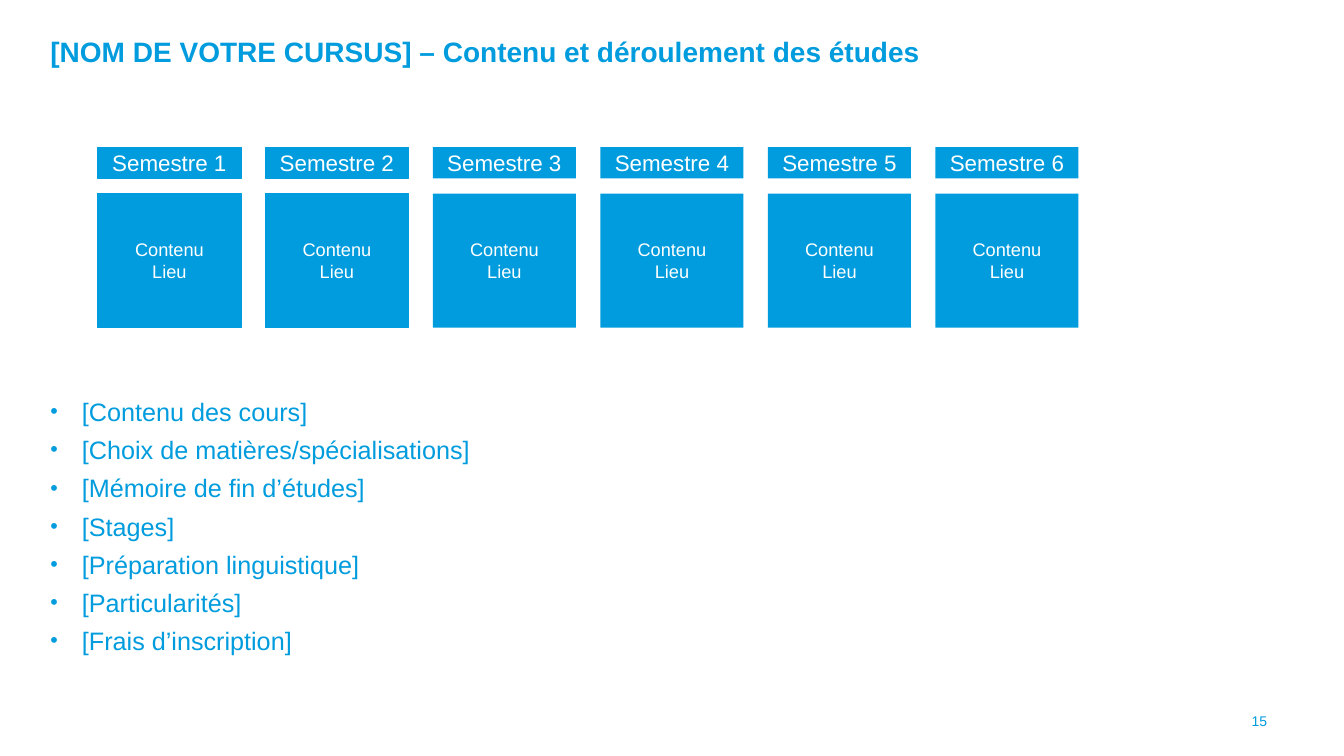
from pptx import Presentation
from pptx.dml.color import RGBColor
from pptx.enum import shapes, text
from pptx.oxml import parse_xml
from pptx.oxml.ns import nsdecls
from pptx.util import Pt

TITLE = "[NOM DE VOTRE CURSUS] – Contenu et déroulement des études"
TERMS = [(f"Semestre {n}", ["Contenu", "Lieu"]) for n in range(1, 7)]
TOPICS = [
    "[Contenu des cours]",
    "[Choix de matières/spécialisations]",
    "[Mémoire de fin d’études]",
    "[Stages]",
    "[Préparation linguistique]",
    "[Particularités]",
    "[Frais d’inscription]",
]
PAGE = "15"

THEME = {
    "font": "Arial",
    "blue": RGBColor.from_string("009CDD"),
    "white": RGBColor.from_string("FFFFFF"),
    "title": 20, "list": 18, "term": 16, "body": 13, "page": 10,
}
LEFT, STEP, WIDE = 69.84, 119.66, 102.24
HEAD = (105.12, 22.32)
BODY = (138.24, 95.76)
OUTLINED = 2
HANG = 22.5


def write(frame, lines, size, color, align, gap=0, line=None, bold=False, bullet=False):
    frame.word_wrap = True
    for i, words in enumerate(lines):
        para = frame.paragraphs[0] if i == 0 else frame.add_paragraph()
        para.text = words
        para.alignment = align
        if line:
            para.line_spacing = line
        if i and gap:
            para.space_before = Pt(gap)
        if bullet:
            props = para._p.get_or_add_pPr()
            props.set("marL", str(Pt(HANG)))
            props.set("indent", str(-Pt(HANG)))
            for tag in (
                f'<a:buClr {nsdecls("a")}><a:srgbClr val="{THEME["blue"]}"/></a:buClr>',
                f'<a:buSzPct {nsdecls("a")} val="85000"/>',
                f'<a:buFont {nsdecls("a")} typeface="Arial"/>',
                f'<a:buChar {nsdecls("a")} char="•"/>',
            ):
                props.append(parse_xml(tag))
        font = para.font
        font.name = THEME["font"]
        font.size = Pt(THEME[size])
        font.bold = bold
        font.color.rgb = THEME[color]


def label(slide, area, lines, size, align, flush=True, **style):
    frame = slide.shapes.add_textbox(*map(Pt, area)).text_frame
    if flush:
        frame.margin_left = frame.margin_right = 0
    else:
        frame.vertical_anchor = text.MSO_ANCHOR.MIDDLE
    write(frame, lines, size, "blue", align, **style)


def block(group, left, span, lines, size, edge):
    top, high = span
    box = group.shapes.add_shape(
        shapes.MSO_SHAPE.RECTANGLE, Pt(left), Pt(top), Pt(WIDE), Pt(high))
    box.shadow.inherit = False
    box.fill.solid()
    box.fill.fore_color.rgb = THEME["blue"]
    if edge:
        box.line.color.rgb = THEME["blue"]
        box.line.width = Pt(0.5)
    else:
        box.line.fill.background()
    box.text_frame.vertical_anchor = text.MSO_ANCHOR.MIDDLE
    write(box.text_frame, lines, size, "white", text.PP_ALIGN.CENTER)


def main():
    deck = Presentation()
    deck.slide_width, deck.slide_height = Pt(960), Pt(540)
    slide = deck.slides.add_slide(deck.slide_layouts[6])
    start, end = text.PP_ALIGN.LEFT, text.PP_ALIGN.RIGHT
    label(slide, (36, 25.92, 717.84, 27.36), [TITLE], "title", start, line=0.8, bold=True)
    label(slide, (36, 283.68, 888, 192.24), TOPICS, "list", start,
          gap=10, line=0.8, bullet=True)
    for i, (term, body) in enumerate(TERMS):
        group = slide.shapes.add_group_shape()
        left = LEFT + i * STEP
        block(group, left, HEAD, [term], "term", i < OUTLINED)
        block(group, left, BODY, body, "body", i < OUTLINED)
    label(slide, (688.32, 500.4, 223.92, 28.8), [PAGE], "page", end, flush=False)
    deck.save("out.pptx")


if __name__ == "__main__":
    main()
